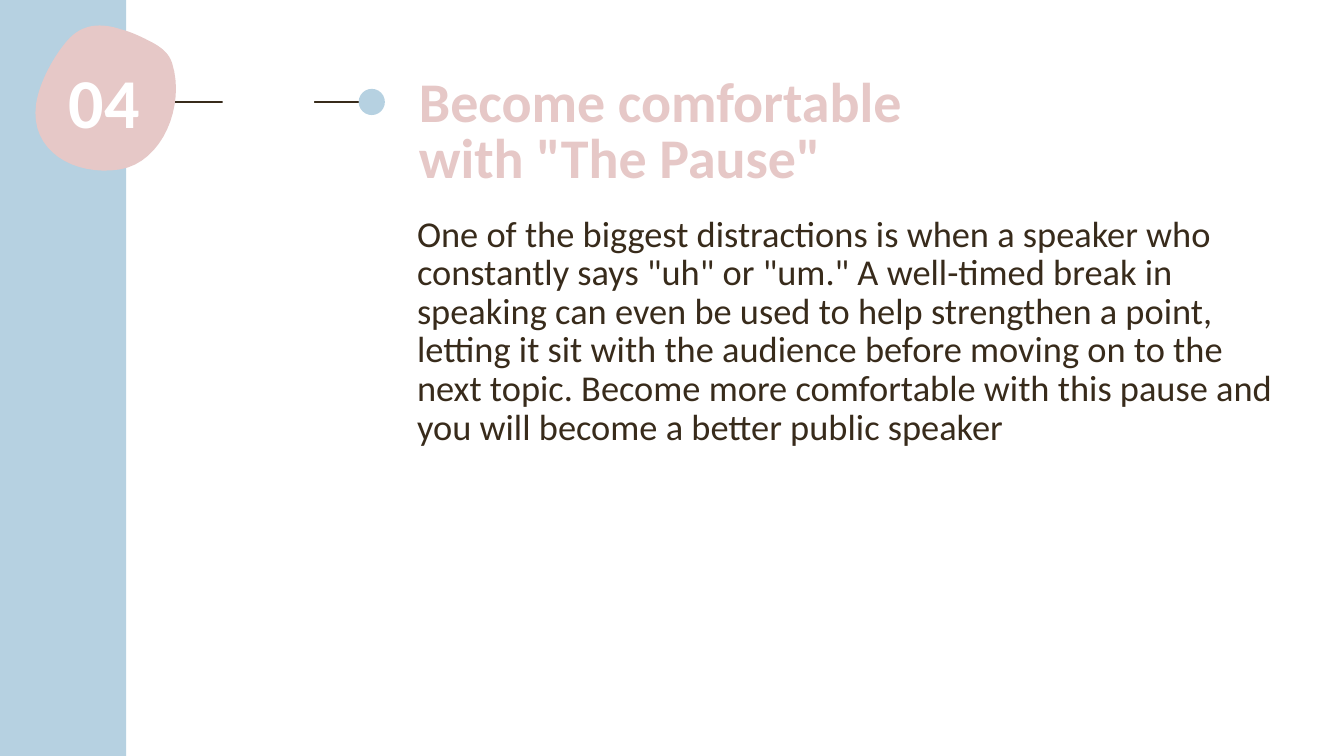
from pptx import Presentation
from pptx.dml.color import RGBColor
from pptx.enum.shapes import MSO_CONNECTOR as Connector, MSO_SHAPE as Preset
from pptx.enum.text import MSO_ANCHOR as Anchor, PP_ALIGN as Align
from pptx.oxml.ns import qn
from pptx.util import Cm, Pt
from lxml import etree

FONT = "Calibri"
BLUE, PINK, BROWN, WHITE = "B6D1E1", "E6C8C7", "382B1B", "FFFFFF"

# Badge outline in cm: start point, then two control points and an end per curve
BADGE_START = (3.05, 0.74)
BADGE_CURVES = [
    ((2.57, 0.58), (2.08, 0.58), (1.70, 1.02)),
    ((1.35, 1.42), (0.99, 2.08), (0.91, 2.62)),
    ((0.74, 3.81), (1.88, 4.45), (3.02, 4.27)),
    ((4.11, 4.09), (4.67, 2.64), (4.34, 1.60)),
    ((4.24, 1.27), (3.94, 1.12), (3.68, 0.99)),
    ((3.48, 0.89), (3.25, 0.79), BADGE_START),
]
CURVE_STEPS = 16

TITLE = 'Become comfortable with "The Pause"'
ADVICE = (
    'One of the biggest distractions is when a speaker who constantly says '
    '"uh" or "um." A well-timed break in speaking can even be used to help '
    'strengthen a point, letting it sit with the audience before moving on to '
    'the next topic. Become more comfortable with this pause and you will '
    'become a better public speaker'
)


def rgb(value):
    return RGBColor.from_string(value)


def paint(shape, color):
    shape.shadow.inherit = False
    shape.fill.solid()
    shape.fill.fore_color.rgb = rgb(color)
    shape.line.fill.background()


def add_preset(slide, preset, left, top, width, height, color):
    paint(slide.shapes.add_shape(preset, Cm(left), Cm(top), Cm(width), Cm(height)), color)


def add_rule(slide, start, end, color, weight):
    rule = slide.shapes.add_connector(Connector.STRAIGHT, *map(Cm, start + end))
    rule.line.color.rgb = rgb(color)
    rule.line.width = Pt(weight)
    etree.SubElement(rule._element.spPr, qn("a:effectLst"))


def bezier_points(start, curves):
    """Yield points along a chain of cubic curves."""
    for first, second, end in curves:
        for step in range(1, CURVE_STEPS + 1):
            t = step / CURVE_STEPS
            u = 1 - t
            yield tuple(
                Cm(u**3 * a + 3 * u * u * t * b + 3 * u * t * t * c + t**3 * d)
                for a, b, c, d in zip(start, first, second, end)
            )
        start = end


def add_blob(slide, start, curves, color):
    outline = slide.shapes.build_freeform(*map(Cm, start))
    outline.add_line_segments(list(bezier_points(start, curves)), close=True)
    paint(outline.convert_to_shape(), color)


def add_text(slide, text, left, top, width, height, size, color, spacing,
             bold=False, align=Align.LEFT):
    frame = slide.shapes.add_textbox(Cm(left), Cm(top), Cm(width), Cm(height)).text_frame
    frame.word_wrap = True
    frame.vertical_anchor = Anchor.TOP
    paragraph = frame.paragraphs[0]
    paragraph.text = text
    paragraph.alignment = align
    paragraph.line_spacing = spacing
    font = paragraph.font
    font.name, font.size, font.bold = FONT, Pt(size), bold
    font.color.rgb = rgb(color)


def main():
    deck = Presentation()
    deck.slide_width, deck.slide_height = Cm(33.87), Cm(19.05)
    slide = deck.slides.add_slide(deck.slide_layouts[6])

    # Line from the badge to the title, broken by a white panel
    add_rule(slide, (9.25, 2.57), (3.84, 2.57), BROWN, 1.5)
    add_preset(slide, Preset.OVAL, 9.04, 2.24, 0.66, 0.66, BLUE)
    add_preset(slide, Preset.RECTANGLE, 5.61, 1.55, 2.31, 11.58, WHITE)

    # Side band
    add_preset(slide, Preset.RECTANGLE, 0, 0, 3.18, 19.05, BLUE)

    # Advice and title
    add_text(slide, ADVICE, 10.26, 5.31, 22.12, 5.28, 26, BROWN, Pt(27.6))
    add_text(slide, TITLE, 10.31, 1.83, 14.17, 4.5, 40, PINK, Pt(40.2), bold=True)

    # Numbered badge
    add_blob(slide, BADGE_START, BADGE_CURVES, PINK)
    add_text(slide, "04", 0.48, 1.6, 4.29, 2.39, 50, WHITE, 0.9,
             bold=True, align=Align.CENTER)

    deck.save("out.pptx")


if __name__ == "__main__":
    main()
